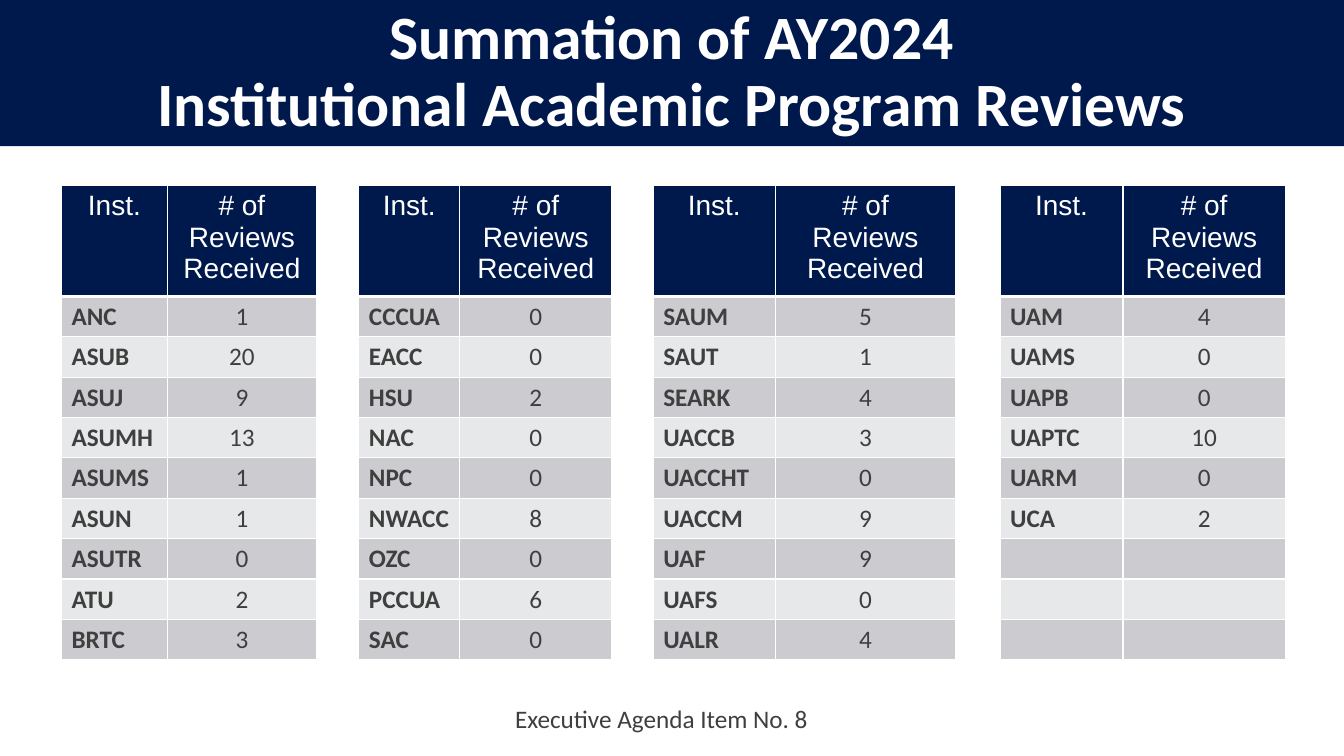
from dataclasses import dataclass

from lxml import etree
from pptx import Presentation
from pptx.dml.color import RGBColor
from pptx.enum import text as t
from pptx.oxml import ns
from pptx.util import Inches, Pt

NAVY = RGBColor(0x00, 0x19, 0x4C)
WHITE = RGBColor(0xFF, 0xFF, 0xFF)
CHARCOAL = RGBColor(0x3F, 0x3F, 0x3F)
DARK_BAND = RGBColor(0xCC, 0xCC, 0xD0)
LIGHT_BAND = RGBColor(0xE7, 0xE8, 0xE9)

TITLE_LINES = ["Summation of AY2024", "Institutional Academic Program Reviews"]
HEADINGS = ["Inst.", "# of Reviews Received"]
COLUMN_WIDTHS = [1.05, 1.48, 0.42, 1, 1.51, 0.41, 1.21, 1.79, 0.44, 1.22, 1.61]
HEADER_HEIGHT, ROW_HEIGHT, ROW_COUNT = 1.1, 0.4, 9
GROUP_STRIDE = 3


@dataclass(frozen=True)
class TextStyle:
    size: int
    font: str
    color: RGBColor
    bold: bool = False
    align: t.PP_ALIGN = t.PP_ALIGN.CENTER


@dataclass(frozen=True)
class Review:
    institution: str
    count: int


TITLE = TextStyle(44, "Calibri", WHITE, bold=True)
HEADING = TextStyle(20, "Arial", WHITE)
INSTITUTION = TextStyle(18, "Calibri", CHARCOAL, bold=True, align=t.PP_ALIGN.LEFT)
COUNT = TextStyle(18, "Calibri", CHARCOAL)

GROUPS = [
    [Review("ANC", 1), Review("ASUB", 20), Review("ASUJ", 9),
     Review("ASUMH", 13), Review("ASUMS", 1), Review("ASUN", 1),
     Review("ASUTR", 0), Review("ATU", 2), Review("BRTC", 3)],
    [Review("CCCUA", 0), Review("EACC", 0), Review("HSU", 2),
     Review("NAC", 0), Review("NPC", 0), Review("NWACC", 8),
     Review("OZC", 0), Review("PCCUA", 6), Review("SAC", 0)],
    [Review("SAUM", 5), Review("SAUT", 1), Review("SEARK", 4),
     Review("UACCB", 3), Review("UACCHT", 0), Review("UACCM", 9),
     Review("UAF", 9), Review("UAFS", 0), Review("UALR", 4)],
    [Review("UAM", 4), Review("UAMS", 0), Review("UAPB", 0),
     Review("UAPTC", 10), Review("UARM", 0), Review("UCA", 2)],
]


def write(frame, words: str, style: TextStyle) -> None:
    frame.text = words
    para = frame.paragraphs[0]
    para.alignment = style.align
    for span in para.runs:
        span.font.size = Pt(style.size)
        span.font.name = style.font
        span.font.bold = style.bold
        span.font.color.rgb = style.color


def place(shape, left: float, top: float, width: float, height: float) -> None:
    shape.left, shape.top = Inches(left), Inches(top)
    shape.width, shape.height = Inches(width), Inches(height)


def format_cell(cell, fill: RGBColor, bottom_width: int) -> None:
    properties = cell._tc.get_or_add_tcPr()
    for side, width in (("L", 1), ("R", 1), ("T", 1), ("B", bottom_width)):
        line = etree.SubElement(properties, ns.qn(f"a:ln{side}"), w=str(Pt(width)))
        solid = etree.SubElement(line, ns.qn("a:solidFill"))
        etree.SubElement(solid, ns.qn("a:srgbClr"), val=str(WHITE))
    cell.fill.solid()
    cell.fill.fore_color.rgb = fill


def add_title(page) -> None:
    title = page.shapes.title
    place(title, 0, 0, 13.33, 1.45)
    title.fill.solid()
    title.fill.fore_color.rgb = NAVY
    frame = title.text_frame
    write(frame, "\v".join(TITLE_LINES), TITLE)
    frame.word_wrap = True
    frame.auto_size = t.MSO_AUTO_SIZE.NONE
    frame.vertical_anchor = t.MSO_ANCHOR.MIDDLE
    frame.paragraphs[0].line_spacing = 0.9


def add_review_table(page) -> None:
    table = page.shapes.add_table(
        ROW_COUNT + 1, len(COLUMN_WIDTHS), Inches(0.61), Inches(1.84),
        Inches(sum(COLUMN_WIDTHS)), Inches(HEADER_HEIGHT + ROW_COUNT * ROW_HEIGHT),
    ).table
    table.first_row = table.horz_banding = False
    for column, width in zip(table.columns, COLUMN_WIDTHS):
        column.width = Inches(width)
    for index, row in enumerate(table.rows):
        row.height = Inches(ROW_HEIGHT if index else HEADER_HEIGHT)
        band = NAVY if index == 0 else DARK_BAND if index % 2 else LIGHT_BAND
        for position, cell in enumerate(row.cells):
            is_gap = position % GROUP_STRIDE == GROUP_STRIDE - 1
            format_cell(cell, WHITE if is_gap else band, 1 if index else 3)
    for group_index, group in enumerate(GROUPS):
        first = group_index * GROUP_STRIDE
        for offset, heading in enumerate(HEADINGS):
            write(table.cell(0, first + offset).text_frame, heading, HEADING)
        for index, review in enumerate(group, start=1):
            write(table.cell(index, first).text_frame, review.institution, INSTITUTION)
            write(table.cell(index, first + 1).text_frame, str(review.count), COUNT)


def add_agenda_note(page) -> None:
    box = page.shapes.add_textbox(Inches(4.43), Inches(6.93), Inches(4.26), Inches(0.4))
    box.text_frame.word_wrap = True
    write(box.text_frame, "Executive Agenda Item No. 8", COUNT)


def main() -> None:
    deck = Presentation()
    deck.slide_width, deck.slide_height = Inches(13.33), Inches(7.5)
    page = deck.slides.add_slide(deck.slide_layouts[5])
    add_title(page)
    add_agenda_note(page)
    add_review_table(page)
    deck.save("out.pptx")


if __name__ == "__main__":
    main()
